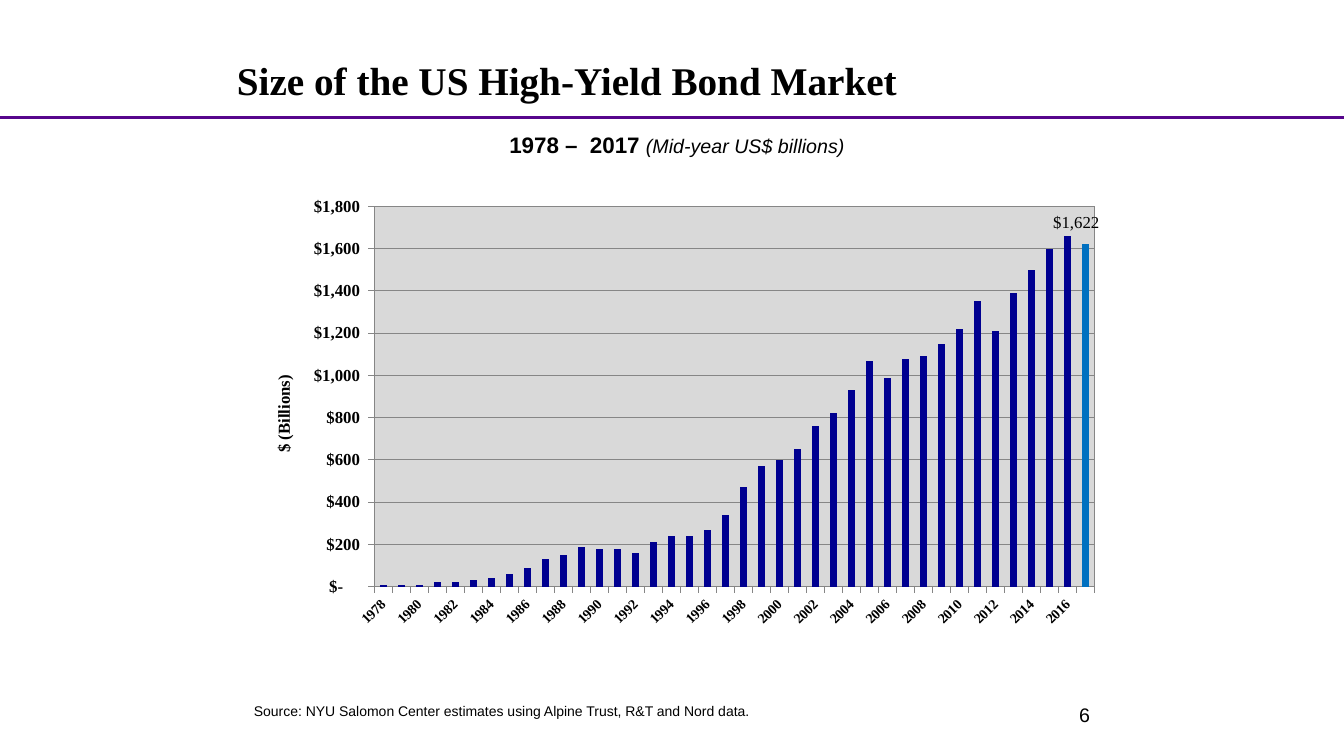
from lxml.etree import SubElement
from pptx import Presentation
from pptx.chart.data import CategoryChartData
from pptx.dml.color import RGBColor
from pptx.enum.chart import XL_CHART_TYPE, XL_LABEL_POSITION, XL_TICK_MARK
from pptx.enum.shapes import MSO_CONNECTOR
from pptx.enum.text import MSO_ANCHOR, MSO_AUTO_SIZE, PP_ALIGN
from pptx.oxml import parse_xml
from pptx.oxml.ns import nsdecls, qn
from pptx.util import Pt

SCALE = 9144
HUES = {"ink": "000000", "rule": "57068C", "plot": "D9D9D9",
        "grid": "868686", "bar": "000090", "last": "0070C0"}
SANS, SERIF = "Arial", "Times New Roman"
FIRST = 1978
SIZES = [10, 10, 10, 20, 20, 30, 40, 60, 90, 130,
         150, 190, 180, 180, 160, 210, 240, 240, 270, 340,
         470, 570, 600, 650, 760, 820, 930, 1070, 990, 1080,
         1090, 1150, 1220, 1350, 1210, 1390, 1500, 1600, 1660, 1620]
MONEY = '_("$"* #,##0_);_("$"* \\(#,##0\\);_("$"* "-"??_);_(@_)'


def hue(name):
    return RGBColor.from_string(HUES[name])


def style(font, **form):
    values = {"name": SANS, "size": 14, "bold": False, "italic": False} | form
    values["size"] = Pt(values["size"])
    for key, value in values.items():
        setattr(font, key, value)
    font.color.rgb = hue("ink")


def paint(form, fill):
    form.fill.solid()
    form.fill.fore_color.rgb = hue(fill)
    form.line.fill.background()


def layout(parent, index, **parts):
    for old in parent.findall(qn("c:layout")):
        parent.remove(old)
    body = "".join(f'<c:{key} val="{value}"/>' for key, value in parts.items())
    parent.insert(index, parse_xml(
        f'<c:layout {nsdecls("c")}><c:manualLayout>{body}</c:manualLayout></c:layout>'))


class Deck:
    def __init__(self, wide, high):
        self.show = Presentation()
        self.show.slide_width, self.show.slide_height = self.box(wide, high)
        self.slide = self.show.slides.add_slide(self.show.slide_layouts[5])

    def box(self, *spots):
        return [spot * SCALE for spot in spots]

    def fill(self, frame, runs, align):
        frame.word_wrap = True
        line = frame.paragraphs[0]
        line.alignment = align
        for words, form in runs:
            run = line.add_run()
            run.text = words
            style(run.font, **form)

    def title(self, spot, words, **form):
        shape = self.slide.shapes.title
        for key, value in zip(("left", "top", "width", "height"), self.box(*spot)):
            setattr(shape, key, value)
        frame = shape.text_frame
        frame.auto_size = MSO_AUTO_SIZE.NONE
        frame.vertical_anchor = MSO_ANCHOR.MIDDLE
        self.fill(frame, [(words, form)], PP_ALIGN.LEFT)

    def text(self, spot, runs, align=PP_ALIGN.LEFT):
        shape = self.slide.shapes.add_textbox(*self.box(*spot))
        self.fill(shape.text_frame, runs, align)

    def rule(self, *ends):
        line = self.slide.shapes.add_connector(MSO_CONNECTOR.STRAIGHT, *self.box(*ends))
        line.line.color.rgb = hue("rule")
        line.line.width = Pt(2.25)
        SubElement(line._element.spPr, qn("a:effectLst"))

    def axis(self, axis, size):
        axis.major_tick_mark = XL_TICK_MARK.OUTSIDE
        axis.minor_tick_mark = XL_TICK_MARK.NONE
        axis.format.line.color.rgb = hue("grid")
        style(axis.tick_labels.font, name=SERIF, size=size, bold=True)

    def chart(self, spot):
        data = CategoryChartData()
        data.categories = [str(FIRST + step) for step in range(len(SIZES))]
        data.add_series("Series 1", SIZES)
        chart = self.slide.shapes.add_chart(
            XL_CHART_TYPE.COLUMN_CLUSTERED, *self.box(*spot), data).chart
        chart.has_title = chart.has_legend = False
        style(chart.font, name=SERIF, size=18)
        self.years(chart.category_axis)
        self.money(chart.value_axis)
        self.bars(chart.plots[0])
        area = chart._chartSpace.chart.plotArea
        layout(area, 0, layoutTarget="inner", xMode="edge", yMode="edge",
               x=0.15, y=0.04, w=0.83, h=0.85)
        area.append(parse_xml(
            f'<c:spPr {nsdecls("c", "a")}>'
            f'<a:solidFill><a:srgbClr val="{HUES["plot"]}"/></a:solidFill>'
            f'<a:ln w="9525"><a:solidFill><a:srgbClr val="{HUES["grid"]}"/>'
            '</a:solidFill></a:ln></c:spPr>'))

    def years(self, axis):
        self.axis(axis, 10)
        node = axis._element
        node.find(qn("c:txPr")).find(qn("a:bodyPr")).set("rot", "-2700000")
        node.find(qn("c:noMultiLvlLbl")).addprevious(
            parse_xml(f'<c:tickLblSkip {nsdecls("c")} val="2"/>'))

    def money(self, axis):
        self.axis(axis, 12)
        axis.minimum_scale, axis.maximum_scale, axis.major_unit = 0, 1800, 200
        axis.tick_labels.number_format = MONEY
        axis.tick_labels.number_format_is_linked = False
        axis.has_major_gridlines = True
        axis.major_gridlines.format.line.color.rgb = hue("grid")
        name = axis.axis_title
        frame = name.text_frame
        frame.text = "$ (Billions)"
        style(frame.paragraphs[0].runs[0].font, name=SERIF, size=12, bold=True)
        frame._txBody.find(qn("a:bodyPr")).set("rot", "-5400000")
        layout(name._element, 1, xMode="edge", yMode="edge", x=0.03, y=0.41)

    def bars(self, plot):
        plot.gap_width = 150
        plot.vary_by_categories = False
        series = plot.series[0]
        series.invert_if_negative = False
        paint(series.format, "bar")
        last = len(SIZES) - 1
        paint(series.points[last].format, "last")
        label = series.points[last - 1].data_label
        label.text_frame.text = "$1,622"
        style(label.text_frame.paragraphs[0].runs[0].font, name=SERIF, size=12)
        label.position = XL_LABEL_POSITION.OUTSIDE_END
        layout(series._element.find(".//" + qn("c:dLbl")), 1, x=0.01, y=0)


def main():
    deck = Deck(1333, 750)
    deck.rule(0, 117, 1333, 117)
    deck.title((225, 50, 907, 58), "Size of the US High-Yield Bond Market",
               name=SERIF, size=28, bold=True)
    deck.text((258, 125, 827, 37),
              [("1978 –  2017 ", {"size": 16, "bold": True}),
               ("(Mid-year US$ billions)", {"italic": True})], PP_ALIGN.CENTER)
    deck.chart((242, 187, 861, 444))
    deck.text((242, 692, 700, 27),
              [("Source: NYU Salomon Center estimates using Alpine Trust, R&T and Nord data.",
                {"size": 10})])
    deck.text((883, 692, 208, 50), [("6", {})], PP_ALIGN.RIGHT)
    deck.show.save("out.pptx")


if __name__ == "__main__":
    main()
